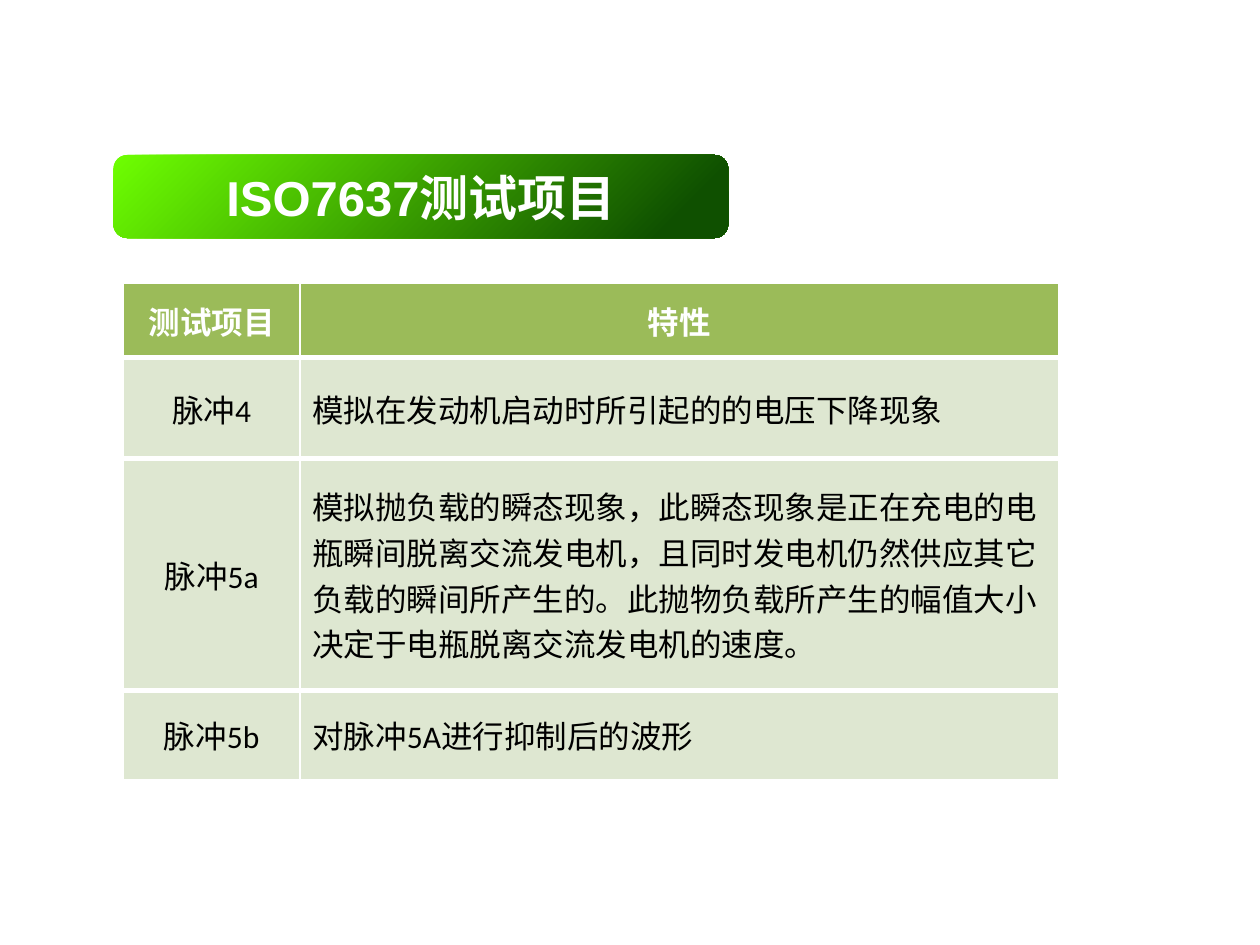
from dataclasses import dataclass

from lxml import etree
from pptx import Presentation
from pptx import util as u
from pptx.dml.color import RGBColor
from pptx.enum import shapes, text
from pptx.oxml.ns import qn


@dataclass(frozen=True)
class Theme:
    white: str = "FFFFFF"
    black: str = "000000"
    header_fill: str = "9BBB59"
    body_fill: str = "DEE7D1"
    gradient: tuple = ((0, "6EFF01"), (0.9, "0F5000"))
    title_font: str = "Arial"
    table_font: str = "Calibri"
    title_size: int = 28
    table_size: int = 18
    thin: int = 1
    thick: int = 3


class SlideBuilder:
    def __init__(self, slide, theme):
        self.slide = slide
        self.theme = theme

    def label(self, frame, content, alignment, color, font_values):
        paragraph = frame.paragraphs[0]
        paragraph.alignment = alignment
        run = paragraph.add_run()
        run.text = content
        run.font.color.rgb = RGBColor.from_string(color)
        for name, value in font_values.items():
            setattr(run.font, name, value)

    def banner(self, content, left, top, width, height):
        theme = self.theme
        shape = self.slide.shapes.add_shape(
            shapes.MSO_SHAPE.ROUNDED_RECTANGLE,
            u.Inches(left), u.Inches(top), u.Inches(width), u.Inches(height))
        shape.shadow.inherit = False
        shape.line.fill.background()
        shape.fill.gradient()
        shape.fill.gradient_angle = 315
        for stop, (position, color) in zip(shape.fill.gradient_stops, theme.gradient):
            stop.position = position
            stop.color.rgb = RGBColor.from_string(color)
        shape.text_frame.vertical_anchor = text.MSO_ANCHOR.MIDDLE
        self.label(shape.text_frame, content, text.PP_ALIGN.CENTER, theme.white,
                   {"name": theme.title_font, "size": u.Pt(theme.title_size), "bold": True})

    def borders(self, cell, widths):
        """Draw white borders; widths maps L, R, T, B (in that order) to points."""
        properties = cell._tc.get_or_add_tcPr()
        for side, width in widths.items():
            line = etree.SubElement(properties, qn(f"a:ln{side}"), w=str(u.Pt(width)))
            fill = etree.SubElement(line, qn("a:solidFill"))
            etree.SubElement(fill, qn("a:srgbClr"), val=self.theme.white)

    def table(self, rows, left, top, column_widths, row_heights):
        theme = self.theme
        table = self.slide.shapes.add_table(
            len(rows), len(column_widths), u.Inches(left), u.Inches(top),
            u.Inches(sum(column_widths)), u.Inches(sum(row_heights))).table
        for column, width in zip(table.columns, column_widths):
            column.width = u.Inches(width)
        for row, height in zip(table.rows, row_heights):
            row.height = u.Inches(height)
        last = len(rows) - 1
        for i, row in enumerate(rows):
            header = i == 0
            font_values = {"name": theme.table_font, "size": u.Pt(theme.table_size),
                           "bold": header}
            for j, content in enumerate(row):
                cell = table.cell(i, j)
                self.borders(cell, {
                    "L": theme.thin, "R": theme.thin,
                    "T": theme.thin if header else theme.thick,
                    "B": theme.thin if i == last else theme.thick})
                cell.fill.solid()
                cell.fill.fore_color.rgb = RGBColor.from_string(
                    theme.header_fill if header else theme.body_fill)
                cell.vertical_anchor = text.MSO_ANCHOR.MIDDLE
                centred = header or j == 0
                self.label(cell.text_frame, content,
                           text.PP_ALIGN.CENTER if centred else text.PP_ALIGN.LEFT,
                           theme.white if header else theme.black, font_values)


TEST_ITEMS = [
    ("测试项目", "特性"),
    ("脉冲4", "模拟在发动机启动时所引起的的电压下降现象"),
    ("脉冲5a", "模拟抛负载的瞬态现象，此瞬态现象是正在充电的电瓶瞬间脱离交流发电机，"
              "且同时发电机仍然供应其它负载的瞬间所产生的。"
              "此抛物负载所产生的幅值大小决定于电瓶脱离交流发电机的速度。"),
    ("脉冲5b", "对脉冲5A进行抑制后的波形"),
]


def main():
    presentation = Presentation()
    presentation.slide_width = u.Inches(10)
    presentation.slide_height = u.Inches(7.5)
    slide = presentation.slides.add_slide(presentation.slide_layouts[6])
    builder = SlideBuilder(slide, Theme())
    builder.banner("ISO7637测试项目", 0.9, 1.23, 4.88, 0.66)
    builder.table(TEST_ITEMS, 0.98, 2.25, (1.4, 6.02), (0.59, 0.8, 1.84, 0.71))
    presentation.save("out.pptx")


if __name__ == "__main__":
    main()
